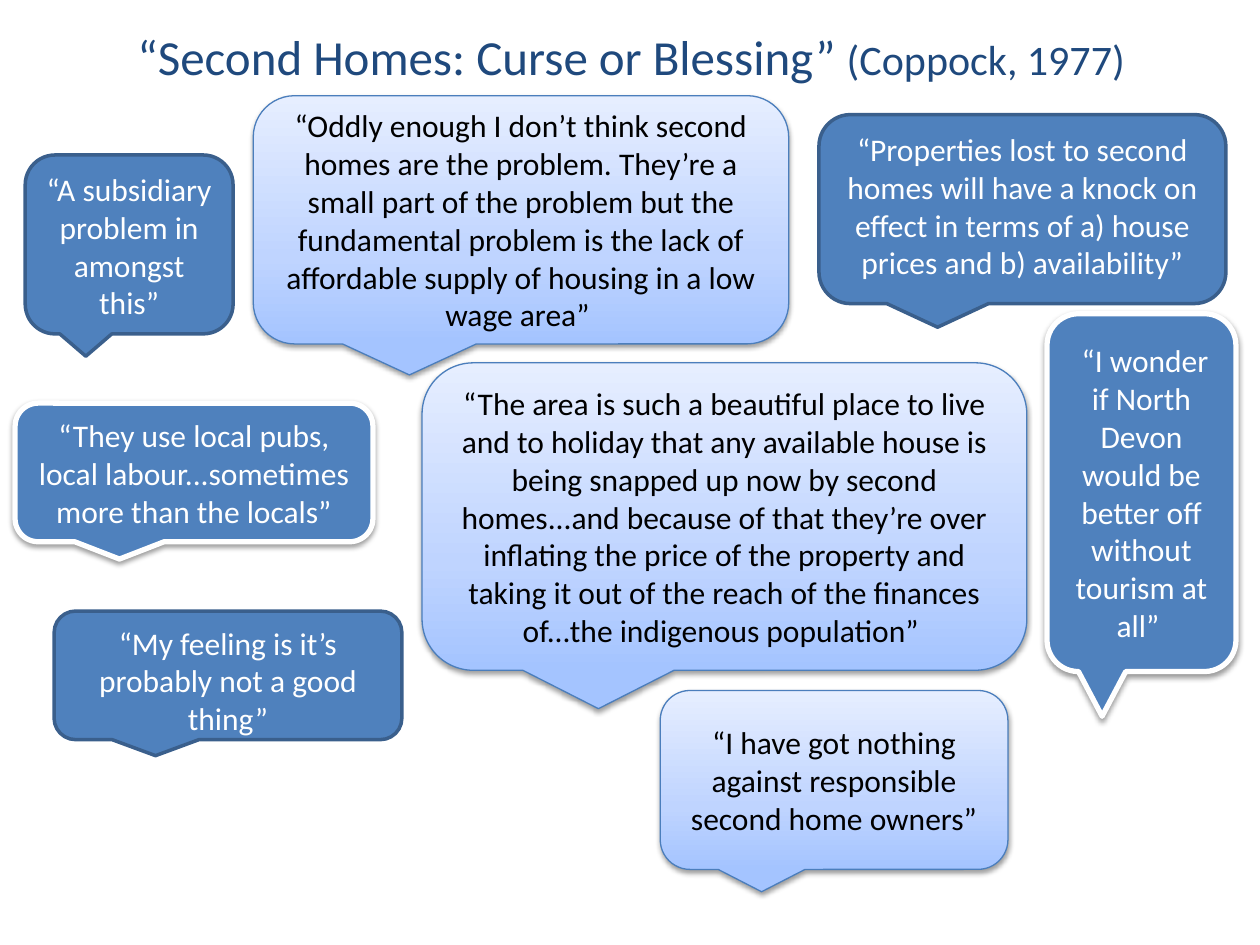
from copy import deepcopy

from lxml.etree import SubElement
from pptx import Presentation
from pptx.dml.color import RGBColor
from pptx.enum.shapes import MSO_SHAPE
from pptx.enum.text import MSO_ANCHOR, PP_ALIGN
from pptx.oxml.ns import qn
from pptx.util import Inches, Pt

COLORS = {
    "title": "1F497D",
    "blue": "4F81BD",
    "dark_blue": "3A5F8C",
    "thin_blue": "4B7EBC",
    "white": "FFFFFF",
    "black": "000000",
}
GRADIENT = [(0, "A4C4FF"), (0.35, "BFD4FF"), (1, "E6EEFF")]
SHADOW = {"blurRad": Pt(3.1), "dist": Pt(1.6), "dir": 90 * 60000, "rotWithShape": 0}

STYLES = {
    "pale": {"line": "thin_blue", "width": 0.75, "text": "black", "shadow": True},
    "outlined": {"line": "white", "width": 3, "text": "white", "shadow": True},
    "plain": {"line": "dark_blue", "width": 2, "text": "white", "shadow": False},
}
MIDDLE, TOP = MSO_ANCHOR.MIDDLE, MSO_ANCHOR.TOP

QUOTES = [
    ("pale", MIDDLE, (2.01, 0.76, 4.25, 1.97),
     "“Oddly enough I don’t think second homes are the problem. They’re a small part of "
     "the problem but the fundamental problem is the lack of affordable supply of housing "
     "in a low wage area” "),
    ("pale", MIDDLE, (5.24, 5.48, 2.76, 1.42),
     "“I have got nothing against responsible second home owners”"),
    ("plain", TOP, (6.5, 0.91, 3.23, 1.5),
     "“Properties lost to second homes will have a knock on effect in terms of a) house "
     "prices and b) availability”"),
    ("outlined", MIDDLE, (8.31, 2.49, 1.5, 2.84),
     " “I wonder if North Devon would be better off without tourism at all” "),
    ("outlined", TOP, (0.12, 3.2, 2.84, 1.1),
     "“They use local pubs, local labour...sometimes more than the locals”"),
    ("plain", TOP, (0.43, 4.85, 2.76, 1.02),
     "“My feeling is it’s probably not a good thing”"),
    ("pale", MIDDLE, (3.35, 2.88, 4.8, 2.44),
     "“The area is such a beautiful place to live and to holiday that any available house "
     "is being snapped up now by second homes...and because of that they’re over inflating "
     "the price of the property and taking it out of the reach of the finances of...the "
     "indigenous population” "),
    ("plain", TOP, (0.2, 1.23, 1.65, 1.42),
     "“A subsidiary problem in amongst this”"),
]


def write_text(frame, anchor, color, runs):
    for key, value in {"word_wrap": True, "vertical_anchor": anchor}.items():
        setattr(frame, key, value)
    paragraph = frame.paragraphs[0]
    paragraph.alignment = PP_ALIGN.CENTER
    for text, size in runs:
        run = paragraph.add_run()
        run.text = text
        for key, value in {"name": "Calibri", "size": Pt(size)}.items():
            setattr(run.font, key, value)
        run.font.color.rgb = RGBColor.from_string(COLORS[color])


def fill_gradient(shape):
    shape.fill.gradient()
    shape.fill.gradient_angle = 90
    first_stop = shape.element.spPr.find(".//" + qn("a:gs"))
    first_stop.addnext(deepcopy(first_stop))
    for stop, (position, color) in zip(shape.fill.gradient_stops, GRADIENT):
        stop.position = position
        stop.color.rgb = RGBColor.from_string(color)


prs = Presentation()
prs.slide_width, prs.slide_height = Inches(10), Inches(7.5)
slide = prs.slides.add_slide(prs.slide_layouts[6])

heading = slide.shapes.add_textbox(Inches(0.51), Inches(0), Inches(9), Inches(0.89))
write_text(heading.text_frame, MIDDLE, "title",
           [("“Second Homes: Curse or Blessing” ", 28), ("(Coppock, 1977)", 24)])

for style_name, anchor, place, quote in QUOTES:
    style = STYLES[style_name]
    bubble = slide.shapes.add_shape(
        MSO_SHAPE.ROUNDED_RECTANGULAR_CALLOUT, *(Inches(length) for length in place))
    if style_name == "pale":
        fill_gradient(bubble)
    else:
        bubble.fill.solid()
        bubble.fill.fore_color.rgb = RGBColor.from_string(COLORS["blue"])
    bubble.line.color.rgb = RGBColor.from_string(COLORS[style["line"]])
    bubble.line.width = Pt(style["width"])
    bubble.shadow.inherit = False
    if style["shadow"]:
        effects = bubble.element.spPr.find(qn("a:effectLst"))
        outer = SubElement(effects, qn("a:outerShdw"))
        for key, value in SHADOW.items():
            outer.set(key, str(value))
        shade = SubElement(outer, qn("a:srgbClr"), val=COLORS["black"])
        SubElement(shade, qn("a:alpha"), val="38000")
    write_text(bubble.text_frame, anchor, style["text"], [(quote, 18)])

prs.save("out.pptx")
